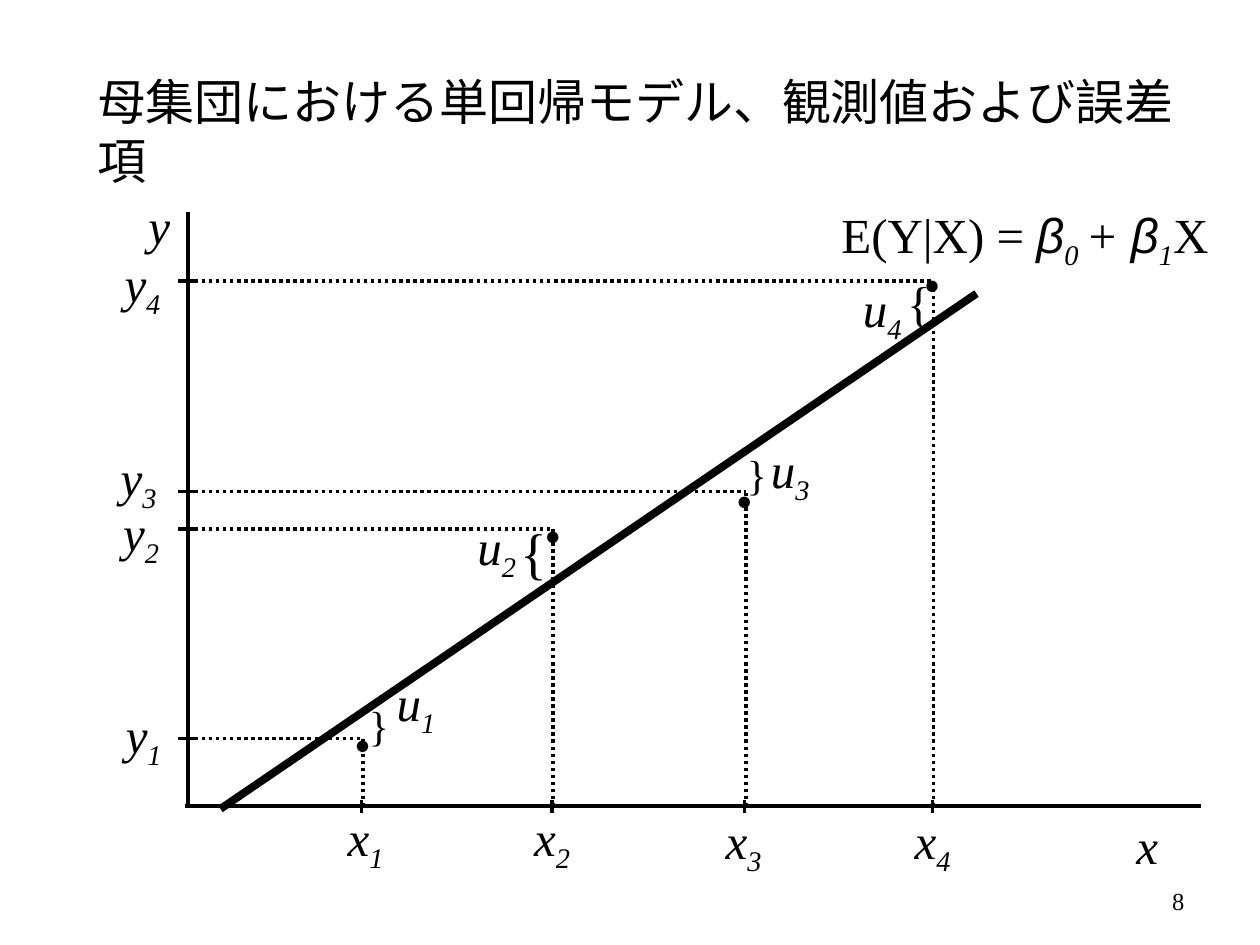
from dataclasses import dataclass
from lxml.etree import SubElement
from pptx import Presentation
from pptx.dml.color import RGBColor
from pptx.enum.dml import MSO_LINE_DASH_STYLE as Dash
from pptx.enum.shapes import MSO_CONNECTOR as Link
from pptx.enum.text import MSO_ANCHOR as Anchor, MSO_AUTO_SIZE as Fit, PP_ALIGN as Align
from pptx.oxml.ns import qn
from pptx.util import Inches, Pt


@dataclass(frozen=True)
class Theme:
    ink: RGBColor = RGBColor(0, 0, 0)
    serif: str = "Times New Roman"
    greek: str = "Arial"
    body: int = 28
    dot: int = 40
    page: int = 14
    axis: float = 2.25
    thin: float = 2
    heavy: float = 4.5


THEME = Theme()
WIDTH, HEIGHT = 10, 7.5
TITLE = "母集団における単回帰モデル、観測値および誤差項"
PAGE = "8"
EQUATION = [("E(Y|X) = ", {}), ("β", {"italic": True, "name": THEME.greek}),
            ("0 ", {"italic": True, "sub": True}), ("+ ", {"italic": True}),
            ("β", {"italic": True, "name": THEME.greek}),
            ("1", {"italic": True, "sub": True}), ("X", {})]
AXIS_X, AXIS_Y = 1.49, 6.4
AXES = [((AXIS_X, 1.68), (AXIS_X, AXIS_Y)), ((1.47, AXIS_Y), (9.53, AXIS_Y))]
REGRESSION = ((1.75, 6.42), (7.75, 2.33))
TICK = 0.15, 0.1
AXIS_NAMES = [("x", (8.92, 6.42), 0.52), ("y", (1.08, 1.5), 0.37)]
OBSERVATIONS = [
    {"at": (2.88, 5.86), "dot": (2.71, 5.36), "x": (2.66, 6.36), "y": (0.9, 5.54),
     "u": (3.05, 5.29), "brace": ("}", 24, (2.83, 5.5), 0.36)},
    {"at": (4.39, 4.2), "dot": (4.22, 3.7), "x": (4.14, 6.36), "y": (0.88, 3.94),
     "u": (3.69, 4.05), "brace": ("{", 32, (4.03, 4.06), 0.41)},
    {"at": (5.92, 3.9), "dot": (5.74, 3.42), "x": (5.66, 6.38), "y": (0.86, 3.5),
     "u": (6.02, 3.44), "brace": ("}", 24, (5.83, 3.51), 0.36)},
    {"at": (7.41, 2.23), "dot": (7.23, 1.71), "x": (7.16, 6.38), "y": (0.89, 1.96),
     "u": (6.75, 2.16), "brace": ("{", 28, (7.1, 2.11), 0.39)},
]
LABEL_WIDTHS = {"x": 0.52, "y": 0.5, "u": 0.52}


def draw_line(slide, start, end, weight, dash=None):
    line = slide.shapes.add_connector(Link.STRAIGHT, *map(Inches, start + end))
    line.line.color.rgb = THEME.ink
    line.line.width = Pt(weight)
    if dash:
        line.line.dash_style = dash
    SubElement(line._element.spPr, qn("a:effectLst"))


def fill_text(frame, runs, size=THEME.body, **settings):
    layout = {"word_wrap": False, "auto_size": Fit.NONE, "vertical_anchor": Anchor.TOP}
    for key, value in (layout | settings).items():
        setattr(frame, key, value)
    paragraph = frame.paragraphs[0]
    paragraph.alignment = Align.LEFT
    for words, style in runs:
        run = paragraph.add_run()
        run.text = words
        run.font.color.rgb = THEME.ink
        look = {"name": THEME.serif, "size": Pt(size)} | style
        if look.pop("sub", False):
            run._r.get_or_add_rPr().set("baseline", "-25000")
        for key, value in look.items():
            setattr(run.font, key, value)
    return paragraph


def write(slide, runs, at, width, size=THEME.body, height=None, **settings):
    height = height or round(size * 1.15 / 72 + 0.11, 2)
    box = slide.shapes.add_textbox(*map(Inches, (*at, width, height)))
    return fill_text(box.text_frame, runs, size, **settings)


def symbol(letter, index=""):
    runs = [(letter, {"italic": True})]
    return runs + [(str(index), {"italic": True, "sub": True})] if index else runs


def draw_observation(slide, index, item):
    x, y = item["at"]
    across, up = TICK
    draw_line(slide, (AXIS_X, y), (x, y), THEME.thin, Dash.ROUND_DOT)
    draw_line(slide, (x, AXIS_Y), (x, y), THEME.thin, Dash.ROUND_DOT)
    draw_line(slide, (AXIS_X - across / 2, y), (AXIS_X + across / 2, y), THEME.thin)
    draw_line(slide, (x - 0.01, AXIS_Y + up / 2), (x - 0.01, AXIS_Y - up / 2), THEME.thin)
    write(slide, [(".", {"bold": True})], item["dot"], 0.34, THEME.dot)
    for letter, width in LABEL_WIDTHS.items():
        write(slide, symbol(letter, index), item[letter], width, word_wrap=letter == "x")
    brace, size, at, width = item["brace"]
    write(slide, [(brace, {})], at, width, size)


def main():
    """Build the slide on the population regression model and its error terms."""
    deck = Presentation()
    deck.slide_width, deck.slide_height = Inches(WIDTH), Inches(HEIGHT)
    slide = deck.slides.add_slide(deck.slide_layouts[5])
    title = slide.shapes.title
    title.left, title.top, title.width, title.height = map(Inches, (0.67, 0.52, 8.9, 1.04))
    fill_text(title.text_frame, [(TITLE, {})], word_wrap=True)
    for start, end in AXES:
        draw_line(slide, start, end, THEME.axis)
    draw_line(slide, *REGRESSION, THEME.heavy)
    for index, item in enumerate(OBSERVATIONS, 1):
        draw_observation(slide, index, item)
    for letter, at, width in AXIS_NAMES:
        write(slide, symbol(letter), at, width)
    equation = write(slide, EQUATION, (6.58, 1.58), 3.17)
    equation.line_spacing, equation.space_before = 0.9, Pt(7)
    page = write(slide, [(PAGE, {})], (7.17, 6.95), 2.33, THEME.page, 0.4,
                 word_wrap=True, vertical_anchor=Anchor.MIDDLE)
    page.alignment = Align.RIGHT
    deck.save("out.pptx")


if __name__ == "__main__":
    main()
